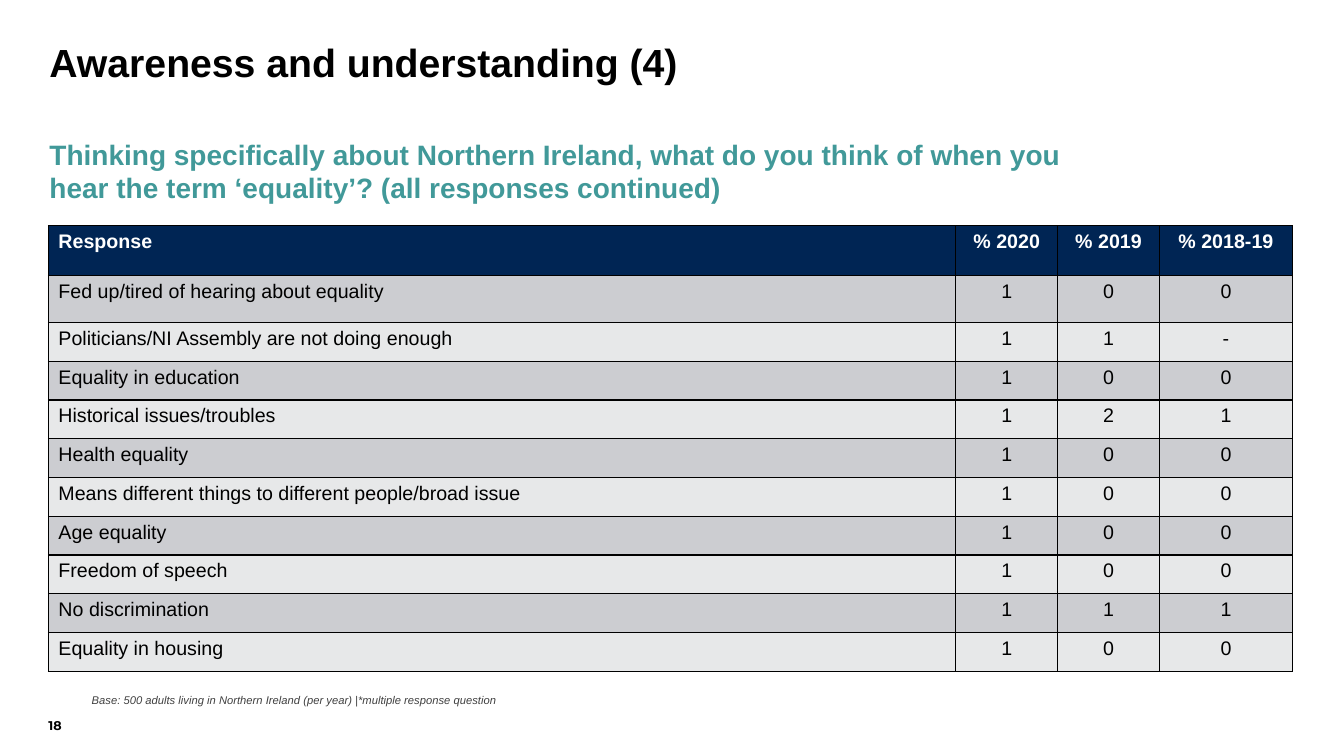
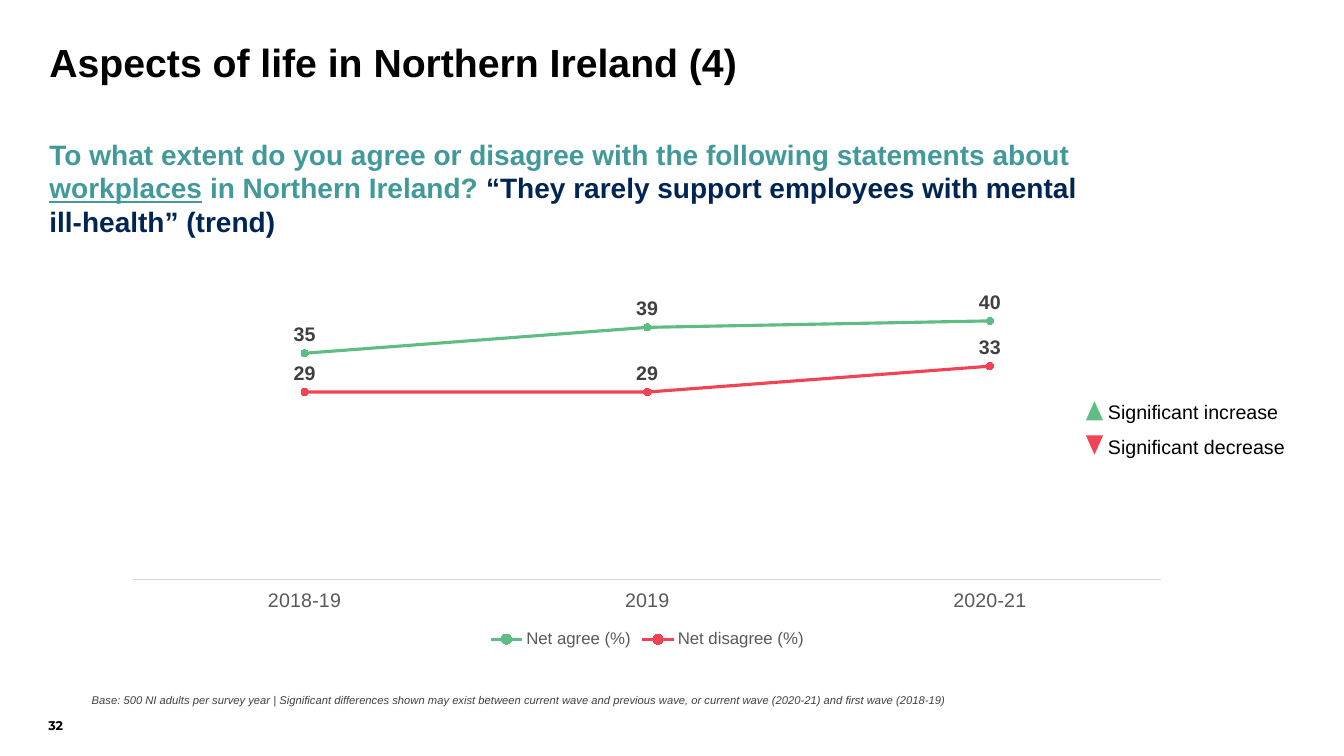
from lxml import etree
from pptx import Presentation
from pptx.chart.data import CategoryChartData
from pptx.dml.color import RGBColor
from pptx.enum.chart import (XL_CHART_TYPE, XL_LABEL_POSITION, XL_LEGEND_POSITION,
                             XL_MARKER_STYLE, XL_TICK_LABEL_POSITION, XL_TICK_MARK)
from pptx.enum.shapes import MSO_SHAPE
from pptx.enum.text import MSO_ANCHOR, PP_ALIGN
from pptx.oxml.ns import qn
from pptx.util import Inches, Pt

LINE = XL_CHART_TYPE.LINE_MARKERS
ABOVE = XL_LABEL_POSITION.ABOVE
BELOW = XL_LEGEND_POSITION.BOTTOM
CIRCLE = XL_MARKER_STYLE.CIRCLE
LOW = XL_TICK_LABEL_POSITION.LOW
NONE = XL_TICK_MARK.NONE
TRIANGLE = MSO_SHAPE.ISOSCELES_TRIANGLE
BOTTOM = MSO_ANCHOR.BOTTOM
LEFT, CENTER = PP_ALIGN.LEFT, PP_ALIGN.CENTER

BLACK, WHITE, NAVY, TEAL = "000000", "FFFFFF", "002554", "419999"
GREEN, RED = "5FBD83", "F14354"
DARK, GREY, PALE = "404040", "595959", "D9D9D9"
BANDS = ["CCCDD1", "E7E8E9"]


def style(font, size, color, bold=False, italic=False, face="Arial"):
    """Set every font trait and the colour, given as a hex string."""
    font.name, font.size = face, Pt(size)
    font.bold, font.italic = bold, italic
    font.color.rgb = RGBColor.from_string(color)


def write(shapes, box, runs, size, bold=False, italic=False, face="Arial",
          anchor=None, pad=(0, 0), wrap=True, space=1.0, after=0):
    """Add a text box; runs are (text, colour, underline) and pad is (x, y)."""
    frame = shapes.add_textbox(*map(Inches, box)).text_frame
    frame.word_wrap = wrap
    frame.margin_left = frame.margin_right = Inches(pad[0])
    frame.margin_top = frame.margin_bottom = Inches(pad[1])
    if anchor is not None:
        frame.vertical_anchor = anchor
    para = frame.paragraphs[0]
    para.line_spacing, para.space_after = space, Pt(after)
    for text, color, under in runs:
        run = para.add_run()
        run.text = text
        style(run.font, size, color, bold, italic, face)
        if under:
            run.font.underline = True


deck = Presentation()
deck.slide_width, deck.slide_height = Inches(13.33), Inches(7.5)

# Title, question, base note and page number of each slide
pages = [
    ("Awareness and understanding (4)", 0.67,
     [("Thinking specifically about Northern Ireland, what do you think of when you "
       "hear the term ‘equality’? (all responses continued)", TEAL, False)],
     "Base: 500 adults living in Northern Ireland (per year) |*multiple response question",
     "18"),
    ("Aspects of life in Northern Ireland (4)", 1.01,
     [("To what extent do you agree or disagree with the following statements about ",
       TEAL, False),
      ("workplaces", TEAL, True),
      (" in Northern Ireland? ", TEAL, False),
      ("“They rarely support employees with mental ill-health” (trend)", NAVY, False)],
     "Base: 500 NI adults per survey year | Significant differences shown may exist between "
     "current wave and previous wave, or current wave (2020-21) and first wave (2018-19)",
     "32"),
]
slides = []
for title, tall, query, base, number in pages:
    slide = deck.slides.add_slide(deck.slide_layouts[6])
    slides.append(slide)
    write(slide.shapes, (0.49, 0.43, 10.22, 0.85), [(title, BLACK, False)], 28,
          bold=True, space=0.9)
    write(slide.shapes, (0.49, 1.36, 10.22, tall), query, 20, bold=True, after=4)
    write(slide.shapes, (0.91, 6.86, 12.33, 0.15), [(base, DARK, False)], 8,
          italic=True, anchor=BOTTOM, space=1.1, after=4)
    write(slide.shapes, (0.48, 6.87, 0.33, 0.4), [(number, BLACK, False)], 9,
          bold=True, face="Montserrat", anchor=BOTTOM, wrap=False)

# Slide 1: table of responses
rows = [
    ("Response", "% 2020", "% 2019", "% 2018-19"),
    ("Fed up/tired of hearing about equality", "1", "0", "0"),
    ("Politicians/NI Assembly are not doing enough", "1", "1", "-"),
    ("Equality in education", "1", "0", "0"),
    ("Historical issues/troubles", "1", "2", "1"),
    ("Health equality", "1", "0", "0"),
    ("Means different things to different people/broad issue", "1", "0", "0"),
    ("Age equality", "1", "0", "0"),
    ("Freedom of speech", "1", "0", "0"),
    ("No discrimination", "1", "1", "1"),
    ("Equality in housing", "1", "0", "0"),
]
widths = [9, 1.01, 1.01, 1.32]
full, tops = 4.42, [0.49, 0.47]
rest = len(rows) - len(tops)
heights = tops + [(full - sum(tops)) / rest] * rest

table = slides[0].shapes.add_table(
    len(rows), len(widths), Inches(0.48), Inches(2.24),
    Inches(sum(widths)), Inches(full)).table
for col, width in zip(table.columns, widths):
    col.width = Inches(width)
for r, (row, height) in enumerate(zip(rows, heights)):
    table.rows[r].height = Inches(height)
    head = r == 0
    for c, text in enumerate(row):
        cell = table.cell(r, c)
        para = cell.text_frame.paragraphs[0]
        para.alignment = CENTER if c else LEFT
        run = para.add_run()
        run.text = text
        style(run.font, 14, WHITE if head else BLACK, bold=head)
        props = cell._tc.get_or_add_tcPr()
        for side in ("lnL", "lnR", "lnT", "lnB"):
            edge = etree.SubElement(props, qn("a:" + side), w=str(Pt(1)))
            fill = etree.SubElement(edge, qn("a:solidFill"))
            etree.SubElement(fill, qn("a:srgbClr"), val=BLACK)
        cell.fill.solid()
        cell.fill.fore_color.rgb = RGBColor.from_string(
            NAVY if head else BANDS[(r - 1) % 2])

# Slide 2: trend chart
shapes = slides[1].shapes
data = CategoryChartData(number_format="0")
data.categories = ["2018-19", "2019", "2020-21"]
data.add_series("Net agree (%)", (35, 39, 40))
data.add_series("Net disagree (%)", (29, 29, 33))
chart = shapes.add_chart(LINE, Inches(1.11), Inches(2.79), Inches(10.62),
                         Inches(3.68), data).chart
style(chart.font, 10, BLACK)
chart.has_title = False
chart.has_legend = True
chart.legend.position = BELOW
chart.legend.include_in_layout = False
style(chart.legend.font, 12, GREY)

years = chart.category_axis
years.major_tick_mark = years.minor_tick_mark = NONE
years.tick_label_position = LOW
style(years.tick_labels.font, 14, GREY)
years.format.line.color.rgb = RGBColor.from_string(PALE)
years.format.line.width = Pt(0.75)
scale = chart.value_axis
scale.visible = scale.has_major_gridlines = False
scale.minimum_scale, scale.maximum_scale = 0, 45

chart.plots[0].vary_by_categories = False
for line, color in zip(chart.plots[0].series, (GREEN, RED)):
    ink = RGBColor.from_string(color)
    line.smooth = False
    line.format.line.color.rgb = ink
    line.format.line.width = Pt(2.25)
    mark = line.marker
    mark.style, mark.size = CIRCLE, 5
    mark.format.fill.solid()
    mark.format.fill.fore_color.rgb = ink
    mark.format.line.color.rgb = ink
    labels = line.data_labels
    labels.show_value, labels.position = True, ABOVE
    labels.number_format, labels.number_format_is_linked = "0", False
    style(labels.font, 14, DARK, bold=True)

# Slide 2: key to the significance marks
key = shapes.add_group_shape().shapes
marks = [("Significant increase", GREEN, 0), ("Significant decrease", RED, 180)]
for i, (text, color, turn) in enumerate(marks):
    top = 3.9 + i * 0.34
    sign = key.add_shape(TRIANGLE, Inches(10.77), Inches(top + 0.08),
                         Inches(0.17), Inches(0.19))
    sign.shadow.inherit = False
    sign.rotation = turn
    sign.fill.solid()
    sign.fill.fore_color.rgb = RGBColor.from_string(color)
    sign.line.fill.background()
    write(key, (10.89, top, 1.99, 0.2), [(text, BLACK, False)], 14,
          pad=(0.1, 0.05), space=1.1, after=6)

deck.save("out.pptx")
